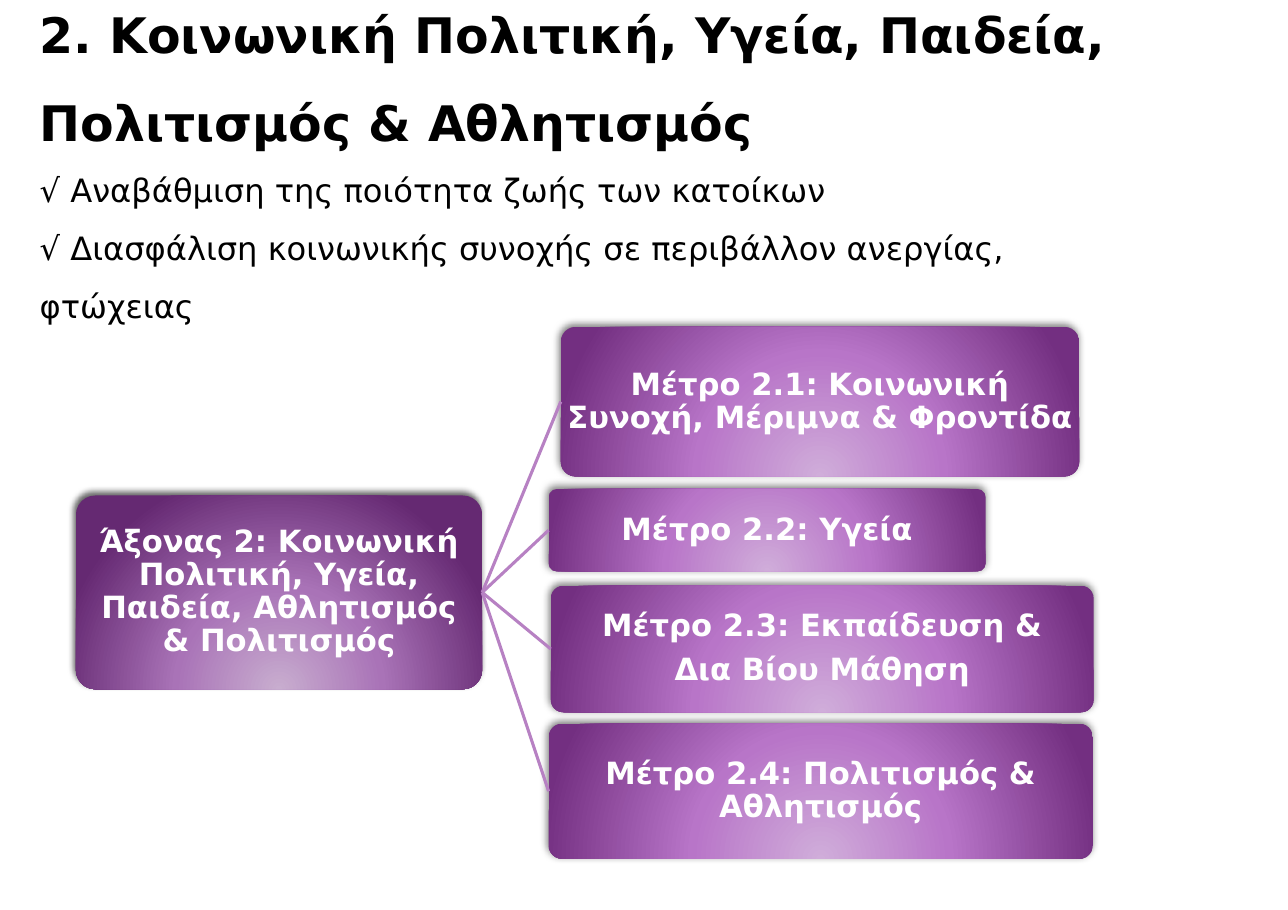
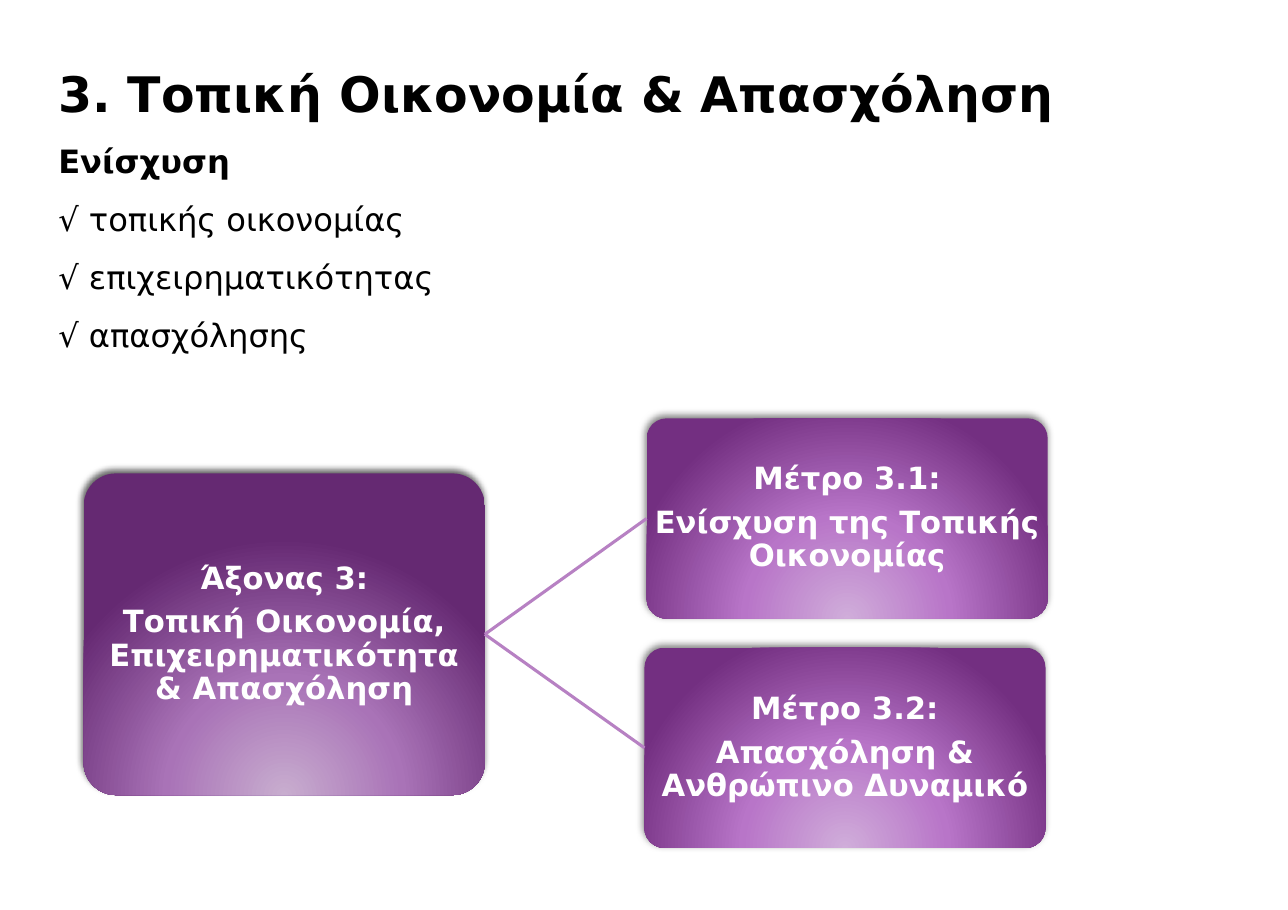
from lxml import etree
from pptx import Presentation
from pptx.dml.color import RGBColor
from pptx.enum.shapes import MSO_CONNECTOR as Connector, MSO_SHAPE as Preset
from pptx.enum.text import MSO_ANCHOR as Anchor, MSO_AUTO_SIZE as AutoSize, PP_ALIGN as Align
from pptx.oxml import parse_xml
from pptx.oxml.ns import nsdecls, qn
from pptx.util import Cm, Pt

BLACK = RGBColor(0x00, 0x00, 0x00)
WHITE = RGBColor(0xFF, 0xFF, 0xFF)
LINK = RGBColor(0xB7, 0x81, 0xC3)
# Gradient stops from the centre outwards
AXIS_TONES = (RGBColor(0xC8, 0xAD, 0xCF), RGBColor(0xA9, 0x73, 0xB7), RGBColor(0x65, 0x29, 0x72))
MEASURE_TONES = (RGBColor(0xD0, 0xAD, 0xDA), RGBColor(0xB8, 0x75, 0xC8), RGBColor(0x73, 0x2F, 0x81))
TONE_STOPS = (0, 46, 100)
# Shadow opacity in percent, blur and distance in points
AXIS_SHADOW = (60, 4, 3)
MEASURE_SHADOW = (50, 5, 2)

LEFT_SITE, RIGHT_SITE = 1, 3


class Deck:
    """Holds the style and the current slide."""

    font = "DejaVu Sans"
    title_size, list_size, box_size = Pt(32), Pt(21), Pt(20)
    title_line = 2.03  # height of one title line, cm

    def __init__(self):
        self.prs = Presentation()
        self.prs.slide_width, self.prs.slide_height = Cm(29.7), Cm(20.99)
        self.slide = None

    def new_slide(self):
        self.slide = self.prs.slides.add_slide(self.prs.slide_layouts[1])

    def fill_text(self, frame, lines, size, color, align, spacing, after=0):
        """Fill a frame with (text, bold) paragraphs."""
        frame.word_wrap = True
        frame.auto_size = AutoSize.NONE
        for index, (text, bold) in enumerate(lines):
            paragraph = frame.paragraphs[0] if index == 0 else frame.add_paragraph()
            paragraph.alignment = align
            paragraph.line_spacing = spacing
            paragraph.space_before, paragraph.space_after = Pt(0), Pt(after)
            run = paragraph.add_run()
            run.text = text
            font = run.font
            font.name, font.size, font.bold = self.font, size, bold
            font.color.rgb = color

    def heading(self, title, goals, left, top, width, title_lines=1):
        """Title with its list of goals directly underneath."""
        title_height = title_lines * self.title_line
        parts = (
            (self.slide.shapes.title, [(title, True)], self.title_size, top, title_height + 0.25),
            (self.slide.placeholders[1], goals, self.list_size, top + title_height, 5.6),
        )
        for holder, lines, size, y, height in parts:
            holder.left, holder.top = Cm(left), Cm(y)
            holder.width, holder.height = Cm(width), Cm(height)
            holder.text_frame.vertical_anchor = Anchor.TOP
            self.fill_text(holder.text_frame, lines, size, BLACK, Align.LEFT, 1.5)
        for paragraph in self.slide.placeholders[1].text_frame.paragraphs:
            props = paragraph._p.get_or_add_pPr()
            props.set("marL", "0")
            props.set("indent", "0")
            etree.SubElement(props, qn("a:buNone"))

    def box(self, lines, place, tones, shadow):
        """Rounded box with a radial gradient and a soft shadow."""
        box = self.slide.shapes.add_shape(Preset.ROUNDED_RECTANGLE, *map(Cm, place))
        box.adjustments[0] = 0.1
        box.line.fill.background()
        box.shadow.inherit = False
        stops = "".join(
            f'<a:gs pos="{stop * 1000}"><a:srgbClr val="{tone}"/></a:gs>'
            for stop, tone in zip(TONE_STOPS, tones))
        gradient = parse_xml(
            f'<a:gradFill {nsdecls("a")} rotWithShape="1"><a:gsLst>{stops}</a:gsLst>'
            '<a:path path="circle"><a:fillToRect l="50000" t="155000" r="50000" b="-55000"/>'
            '</a:path></a:gradFill>')
        props = box._element.spPr
        props.find(qn("a:prstGeom")).addnext(gradient)
        opacity, blur, distance = shadow
        props.find(qn("a:effectLst")).append(parse_xml(
            f'<a:outerShdw {nsdecls("a")} blurRad="{Pt(blur)}" dist="{Pt(distance)}" '
            f'dir="{245 * 60000}" algn="tl" rotWithShape="0"><a:srgbClr val="{BLACK}">'
            f'<a:alpha val="{opacity * 1000}"/></a:srgbClr></a:outerShdw>'))
        frame = box.text_frame
        frame.vertical_anchor = Anchor.MIDDLE
        frame.margin_left = frame.margin_right = Cm(0.03)
        frame.margin_top = frame.margin_bottom = Cm(0.03)
        self.fill_text(frame, [(line, True) for line in lines], self.box_size, WHITE,
                       Align.CENTER, 0.9, after=7)
        return box

    def link(self, axis, measure):
        """Line from the axis to one of its measures."""
        link = self.slide.shapes.add_connector(Connector.STRAIGHT, 0, 0, 0, 0)
        link.begin_connect(axis, RIGHT_SITE)
        link.end_connect(measure, LEFT_SITE)
        link.line.color.rgb = LINK
        link.line.width = Pt(2)
        etree.SubElement(link._element.spPr, qn("a:effectLst"))

    def tree(self, axis, measures):
        """Axis box linked to a column of measure boxes."""
        root = self.box(*axis, AXIS_TONES, AXIS_SHADOW)
        for lines, place in measures:
            self.link(root, self.box(lines, place, MEASURE_TONES, MEASURE_SHADOW))


def main():
    deck = Deck()

    # Social policy
    deck.new_slide()
    deck.heading(
        "2. Κοινωνική Πολιτική, Υγεία, Παιδεία, Πολιτισμός & Αθλητισμός",
        [("√ Αναβάθμιση της ποιότητα ζωής των κατοίκων", False),
         ("√ Διασφάλιση κοινωνικής συνοχής σε περιβάλλον ανεργίας, φτώχειας", False)],
        left=0.66, top=-0.69, width=25.4, title_lines=2)
    deck.tree(
        (["Άξονας 2: Κοινωνική Πολιτική, Υγεία, Παιδεία, Αθλητισμός & Πολιτισμός"],
         (1.75, 11.43, 9.37, 4.47)),
        [(["Μέτρο 2.1: Κοινωνική Συνοχή, Μέριμνα & Φροντίδα"], (12.93, 7.54, 11.96, 3.45)),
         (["Μέτρο 2.2: Υγεία"], (12.65, 11.28, 10.08, 1.9)),
         (["Μέτρο 2.3: Εκπαίδευση &", "Δια Βίου Μάθηση"], (12.7, 13.51, 12.52, 2.92)),
         (["Μέτρο 2.4: Πολιτισμός & Αθλητισμός"], (12.65, 16.69, 12.55, 3.12))])

    # Local economy
    deck.new_slide()
    deck.heading(
        "3. Τοπική Οικονομία & Απασχόληση",
        [("Ενίσχυση", True), ("√ τοπικής οικονομίας", False),
         ("√ επιχειρηματικότητας", False), ("√ απασχόλησης", False)],
        left=1.09, top=0.67, width=23.93)
    deck.tree(
        (["Άξονας 3:", "Τοπική Οικονομία, Επιχειρηματικότητα & Απασχόληση"],
         (1.93, 10.92, 9.25, 7.42)),
        [(["Μέτρο 3.1:", "Ενίσχυση της Τοπικής Οικονομίας"], (14.91, 9.65, 9.25, 4.62)),
         (["Μέτρο 3.2:", "Απασχόληση & Ανθρώπινο Δυναμικό"], (14.86, 14.94, 9.25, 4.62))])

    deck.prs.save("out.pptx")


if __name__ == "__main__":
    main()
